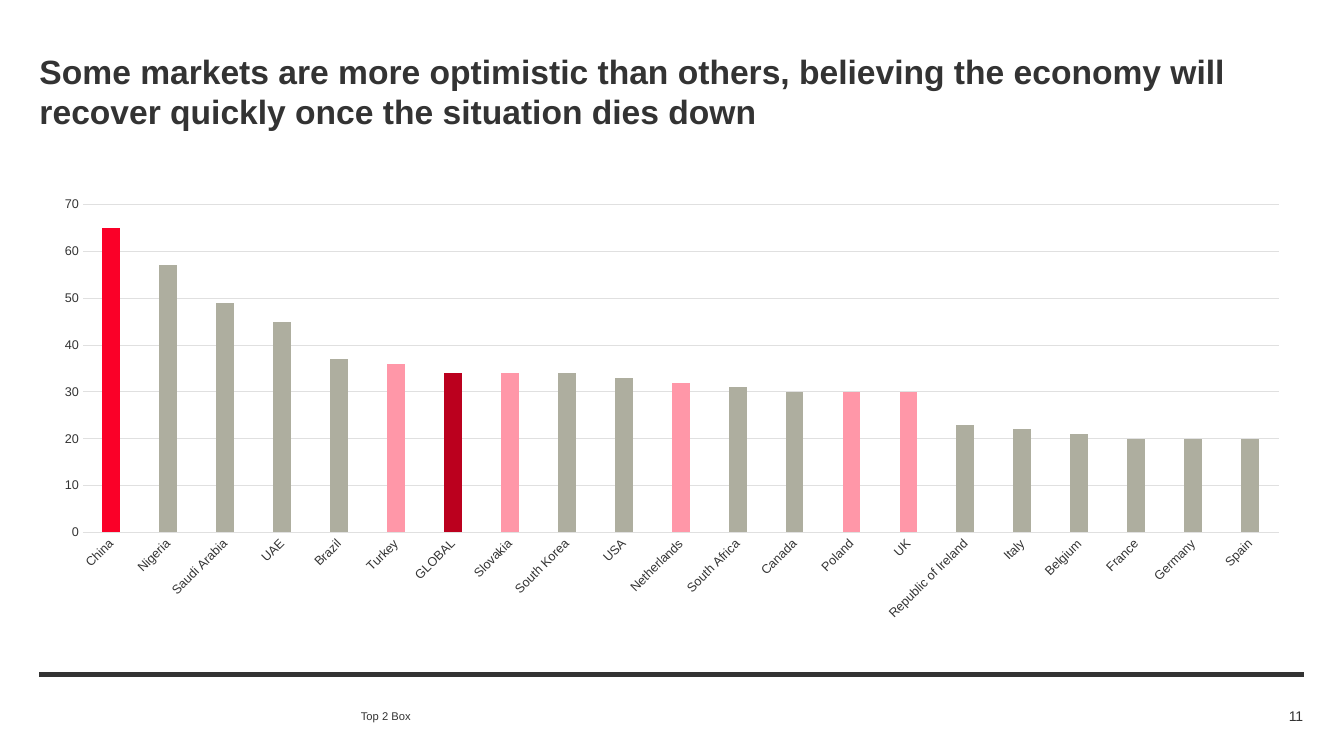
from pptx import Presentation
from pptx import util as u
from pptx.chart import data as cd
from pptx.dml import color as col
from pptx.enum import chart as ch, shapes, text
from pptx.oxml import xmlchemy as xc

Pt = u.Pt
HUES = {"ink": "333333", "grid": "E0E0E0", "gray": "AEAE9F",
        "red": "FA0028", "pink": "FF97A8", "dark": "BB001E"}
SCORES = {"China": 65, "Nigeria": 57, "Saudi Arabia": 49, "UAE": 45,
          "Brazil": 37, "Turkey": 36, "GLOBAL": 34, "Slovakia": 34,
          "South Korea": 34, "USA": 33, "Netherlands": 32,
          "South Africa": 31, "Canada": 30, "Poland": 30, "UK": 30,
          "Republic of Ireland": 23, "Italy": 22, "Belgium": 21,
          "France": 20, "Germany": 20, "Spain": 20}
ACCENTS = {"China": "red", "GLOBAL": "dark"}
ACCENTS.update(dict.fromkeys(
    ["Turkey", "Slovakia", "Netherlands", "Poland", "UK"], "pink"))
LEFT, WIDTH = 28.2, 903.2


class Page:
    face = "Arial"

    def __init__(self, slide):
        self.slide = slide

    def hue(self, name):
        return col.RGBColor.from_string(HUES[name])

    def font(self, font, size, bold=False):
        font.name = self.face
        font.size = Pt(size)
        font.bold = bold
        font.color.rgb = self.hue("ink")

    def line(self, line, name, width):
        line.color.rgb = self.hue(name)
        line.width = Pt(width)

    def fill(self, part, name):
        part.format.fill.solid()
        part.format.fill.fore_color.rgb = self.hue(name)

    def label(self, words, x, y, w, h, size, bold=False,
              align=text.PP_ALIGN.LEFT, anchor=text.MSO_ANCHOR.MIDDLE):
        box = self.slide.shapes.add_textbox(Pt(x), Pt(y), Pt(w), Pt(h))
        frame = box.text_frame
        frame.margin_left = frame.margin_right = 0
        frame.margin_top = frame.margin_bottom = 0
        frame.word_wrap = True
        frame.vertical_anchor = anchor
        frame.text = words
        para = frame.paragraphs[0]
        para.alignment = align
        self.font(para.runs[0].font, size, bold)

    def rule(self, x, y, w):
        rule = self.slide.shapes.add_connector(
            shapes.MSO_CONNECTOR.STRAIGHT, Pt(x), Pt(y), Pt(x + w), Pt(y))
        self.line(rule.line, "ink", 3)
        props = rule._element.spPr
        props.append(xc.OxmlElement("a:effectLst"))

    def axis(self, axis):
        axis.major_tick_mark = axis.minor_tick_mark = ch.XL_TICK_MARK.NONE
        self.font(axis.tick_labels.font, 9)

    def columns(self, scores, accents, x, y, w, h):
        data = cd.CategoryChartData()
        data.categories = list(scores)
        data.add_series("Series 1", list(scores.values()))
        chart = self.slide.shapes.add_chart(
            ch.XL_CHART_TYPE.COLUMN_CLUSTERED,
            Pt(x), Pt(y), Pt(w), Pt(h), data).chart
        chart.has_legend = chart.has_title = False
        self.font(chart.font, 10)

        plot = chart.plots[0]
        plot.vary_by_categories = False
        plot.gap_width = 219
        plot.overlap = -27
        bars = plot.series[0]
        self.fill(bars, "gray")
        for spot, name in enumerate(scores):
            if name in accents:
                self.fill(bars.points[spot], accents[name])

        cats, vals = chart.category_axis, chart.value_axis
        self.axis(cats)
        self.line(cats.format.line, "grid", 0.75)
        cats._element.txPr.bodyPr.set("rot", "-2700000")
        self.axis(vals)
        vals.minimum_scale, vals.maximum_scale = 0, 70
        vals.major_unit = 10
        vals.format.line.fill.background()
        self.line(vals.major_gridlines.format.line, "grid", 0.75)


def main():
    deck = Presentation()
    deck.slide_width, deck.slide_height = Pt(960), Pt(540)
    page = Page(deck.slides.add_slide(deck.slide_layouts[6]))
    page.rule(LEFT, 481.8, WIDTH)
    page.label("Some markets are more optimistic than others, believing "
               "the economy will recover quickly once the situation dies "
               "down", LEFT, 36, WIDTH, 32, 24, bold=True,
               anchor=text.MSO_ANCHOR.TOP)
    page.label("Top 2 Box", 257.8, 503.3, 590.4, 15.8, 8)
    page.columns(SCORES, ACCENTS, LEFT, 134.6, WIDTH, 315.4)
    page.label("11", 854.6, 503.3, 76.3, 15.8, 10,
               align=text.PP_ALIGN.RIGHT)
    deck.save("out.pptx")


if __name__ == "__main__":
    main()
